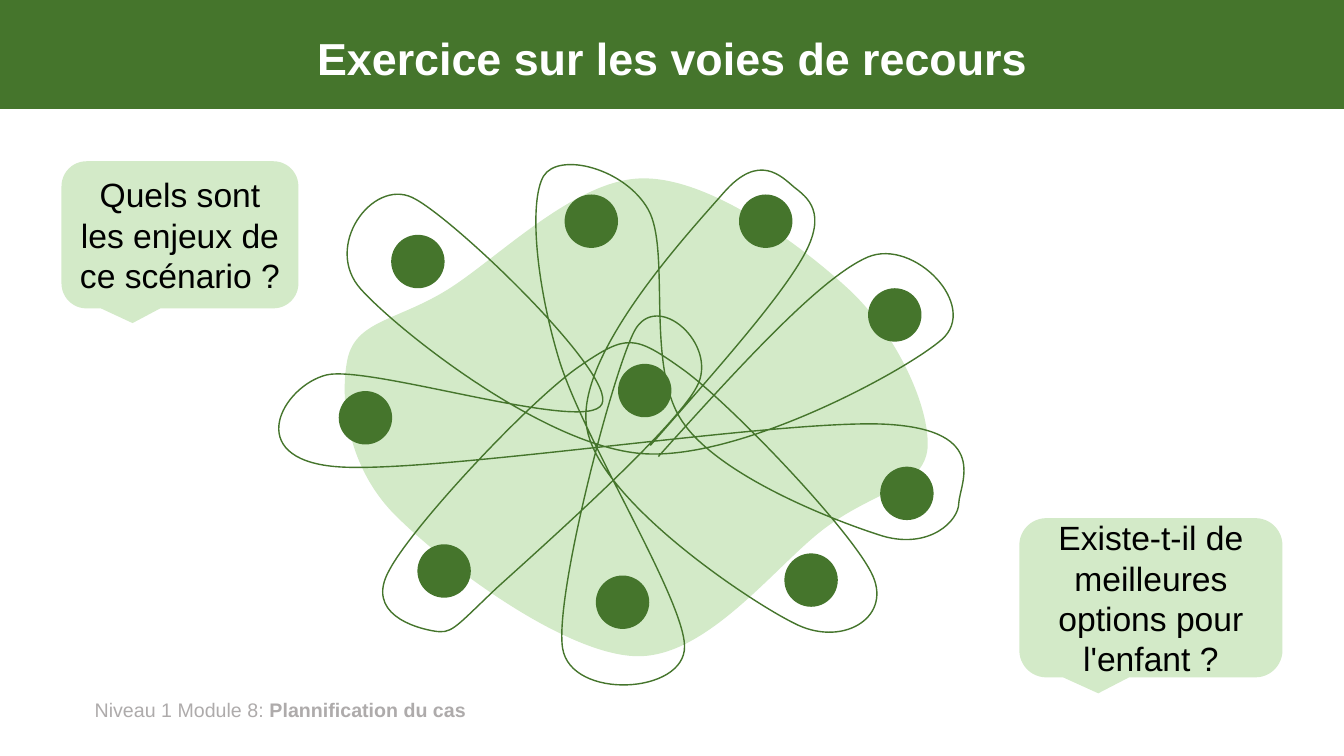
import lxml.etree
import pptx
import pptx.dml.color
import pptx.enum.shapes
import pptx.enum.text
import pptx.oxml.ns
import pptx.util

Inches = pptx.util.Inches
Pt = pptx.util.Pt
RGB = pptx.dml.color.RGBColor
SHAPE = pptx.enum.shapes.MSO_SHAPE
ALIGN = pptx.enum.text.PP_ALIGN
MIDDLE = pptx.enum.text.MSO_ANCHOR.MIDDLE
qn = pptx.oxml.ns.qn

THEME = {
    "dark": RGB.from_string("45752C"),
    "light": RGB.from_string("D3EAC8"),
    "white": RGB.from_string("FFFFFF"),
    "black": RGB.from_string("000000"),
    "grey": RGB.from_string("AEABAB"),
    "font": "Arial",
    "title": Pt(32),
    "callout": Pt(24),
    "footer": Pt(14),
    "thread": Pt(1),
}


def add_curve(shapes, start, curves, closed):
    """Draw cubic Bézier curves; each holds two control points and an end point."""
    start = tuple(Inches(n) for n in start)
    curves = [[Inches(n) for n in curve] for curve in curves]
    # Points along the curves give the outline its exact bounding box.
    steps, points = 20, []
    x0, y0 = start
    for x1, y1, x2, y2, x3, y3 in curves:
        for t in (step / steps for step in range(1, steps + 1)):
            a, b, c, d = (1 - t) ** 3, 3 * t * (1 - t) ** 2, 3 * t * t * (1 - t), t ** 3
            points.append((round(a * x0 + b * x1 + c * x2 + d * x3),
                           round(a * y0 + b * y1 + c * y2 + d * y3)))
        x0, y0 = x3, y3
    builder = shapes.build_freeform(*start, scale=1.0)
    builder.add_line_segments(points, close=closed)
    curve_shape = builder.convert_to_shape()
    curve_shape.shadow.inherit = False

    # Swap the straight segments for true curves.
    outline = next(curve_shape.element.iter(qn("a:path")))
    for segment in outline.findall(qn("a:lnTo")):
        outline.remove(segment)
    for index, curve in enumerate(curves, 1):
        bezier = lxml.etree.Element(qn("a:cubicBezTo"))
        for x, y in zip(curve[::2], curve[1::2]):
            lxml.etree.SubElement(bezier, qn("a:pt"), x=str(x - curve_shape.left),
                                  y=str(y - curve_shape.top))
        outline.insert(index, bezier)
    return curve_shape


def add_filled(shapes, kind, box, color):
    shape = shapes.add_shape(kind, *(Inches(n) for n in box))
    shape.shadow.inherit = False
    shape.fill.solid()
    shape.fill.fore_color.rgb = color
    shape.line.fill.background()
    return shape


deck = pptx.Presentation()
deck.slide_width, deck.slide_height = Inches(13.33), Inches(7.5)
shapes = deck.slides.add_slide(deck.slide_layouts[6]).shapes

# Banner and footer
add_filled(shapes, SHAPE.RECTANGLE, (0, 0, 13.33, 1.08), THEME["dark"])

footer = shapes.add_textbox(Inches(0.84), Inches(6.87), Inches(4.55), Inches(0.34))
footer.text_frame.word_wrap = True
footer_line = footer.text_frame.paragraphs[0]
footer_line.font.name = THEME["font"]
footer_line.font.size = THEME["footer"]
footer_line.font.color.rgb = THEME["grey"]
footer_line.add_run().text = "Niveau 1 Module 8: "
module_name = footer_line.add_run()
module_name.text = "Plannification du cas"
module_name.font.bold = True

# Web of people: ground, dots and the thread that joins them
ground = add_curve(shapes, (4.43, 2.88), [
    (4.92, 2.58, 5.72, 1.76, 6.39, 1.77),
    (7.06, 1.77, 7.97, 2.45, 8.44, 2.89),
    (8.91, 3.34, 9.23, 4.06, 9.2, 4.45),
    (9.16, 4.83, 8.69, 4.87, 8.21, 5.22),
    (7.73, 5.56, 7.03, 6.53, 6.31, 6.51),
    (5.59, 6.49, 4.38, 5.58, 3.9, 5.09),
    (3.42, 4.59, 3.37, 3.91, 3.45, 3.55),
    (3.54, 3.18, 3.94, 3.18, 4.43, 2.88),
], closed=True)
ground.fill.solid()
ground.fill.fore_color.rgb = THEME["light"]
ground.line.fill.background()

DOT = 0.53
for left, top in [(3.88, 2.33), (5.6, 1.93), (8.61, 2.86), (8.73, 4.63), (5.91, 5.71),
                  (3.36, 3.88), (4.14, 5.4), (7.78, 5.49), (7.33, 1.93), (6.13, 3.61)]:
    add_filled(shapes, SHAPE.OVAL, (left, top, DOT, DOT), THEME["dark"])

thread = add_curve(shapes, (6.45, 4.42), [
    (7.09, 3.69, 7.73, 2.97, 7.97, 2.54),
    (8.21, 2.11, 8.01, 1.96, 7.88, 1.86),
    (7.75, 1.75, 7.53, 1.51, 7.18, 1.91),
    (6.84, 2.3, 5.7, 3.52, 5.82, 4.24),
    (5.93, 4.95, 7.39, 5.94, 7.87, 6.18),
    (8.34, 6.43, 8.84, 6.14, 8.66, 5.72),
    (8.48, 5.3, 7.26, 4.02, 6.78, 3.67),
    (6.29, 3.32, 6.22, 3.31, 5.74, 3.64),
    (5.25, 3.98, 4.09, 5.22, 3.86, 5.66),
    (3.62, 6.09, 4.12, 6.23, 4.3, 6.26),
    (4.48, 6.29, 4.49, 6.25, 4.92, 5.84),
    (5.36, 5.44, 6.68, 4.27, 6.91, 3.84),
    (7.14, 3.42, 6.51, 2.86, 6.29, 3.29),
    (6.07, 3.72, 5.5, 5.91, 5.58, 6.43),
    (5.66, 6.95, 6.8, 6.89, 6.79, 6.41),
    (6.78, 5.93, 5.77, 4.33, 5.54, 3.55),
    (5.31, 2.78, 5.25, 2, 5.39, 1.75),
    (5.54, 1.5, 6.2, 1.67, 6.43, 2.08),
    (6.66, 2.49, 6.39, 3.66, 6.78, 4.2),
    (7.16, 4.74, 8.31, 5.18, 8.76, 5.32),
    (9.22, 5.45, 9.51, 5.17, 9.51, 4.99),
    (9.52, 4.8, 9.83, 4.27, 8.8, 4.21),
    (7.77, 4.15, 4.26, 4.71, 3.33, 4.63),
    (2.4, 4.55, 2.8, 3.83, 3.24, 3.72),
    (3.68, 3.62, 5.83, 4.31, 5.97, 4.01),
    (6.12, 3.72, 4.49, 2.15, 4.09, 1.96),
    (3.69, 1.77, 3.2, 2.45, 3.58, 2.87),
    (3.96, 3.29, 5.39, 4.42, 6.36, 4.5),
    (7.32, 4.58, 8.97, 3.69, 9.34, 3.37),
    (9.72, 3.04, 9.07, 2.36, 8.61, 2.55),
    (8.14, 2.75, 7.33, 3.64, 6.53, 4.53),
], closed=False)
thread.fill.background()
thread.line.color.rgb = THEME["dark"]
thread.line.width = THEME["thread"]

# Title and questions
title = shapes.add_textbox(Inches(0.92), Inches(0.13), Inches(11.5), Inches(0.95))
title_text = "Exercice sur les voies de recours"
wordings = [(title, title_text, THEME["title"], THEME["white"])]
for box, question in [
    ((0.61, 1.6, 2.35, 1.46), "Quels sont les enjeux de ce scénario ?"),
    ((10.11, 5.14, 2.61, 1.58), "Existe-t-il de meilleures options pour l'enfant ?"),
]:
    callout = add_filled(shapes, SHAPE.ROUNDED_RECTANGULAR_CALLOUT, box, THEME["light"])
    for index, value in enumerate((-0.2, 0.6, 0.17)):
        callout.adjustments[index] = value
    wordings.append((callout, question, THEME["callout"], THEME["black"]))

for holder, wording, size, color in wordings:
    frame = holder.text_frame
    frame.word_wrap = True
    frame.vertical_anchor = MIDDLE
    frame.text = wording
    paragraph = frame.paragraphs[0]
    paragraph.alignment = ALIGN.CENTER
    paragraph.font.name = THEME["font"]
    paragraph.font.size = size
    paragraph.font.color.rgb = color
heading = title.text_frame.paragraphs[0]
heading.font.bold = True
heading.line_spacing = 0.9

deck.save("out.pptx")
